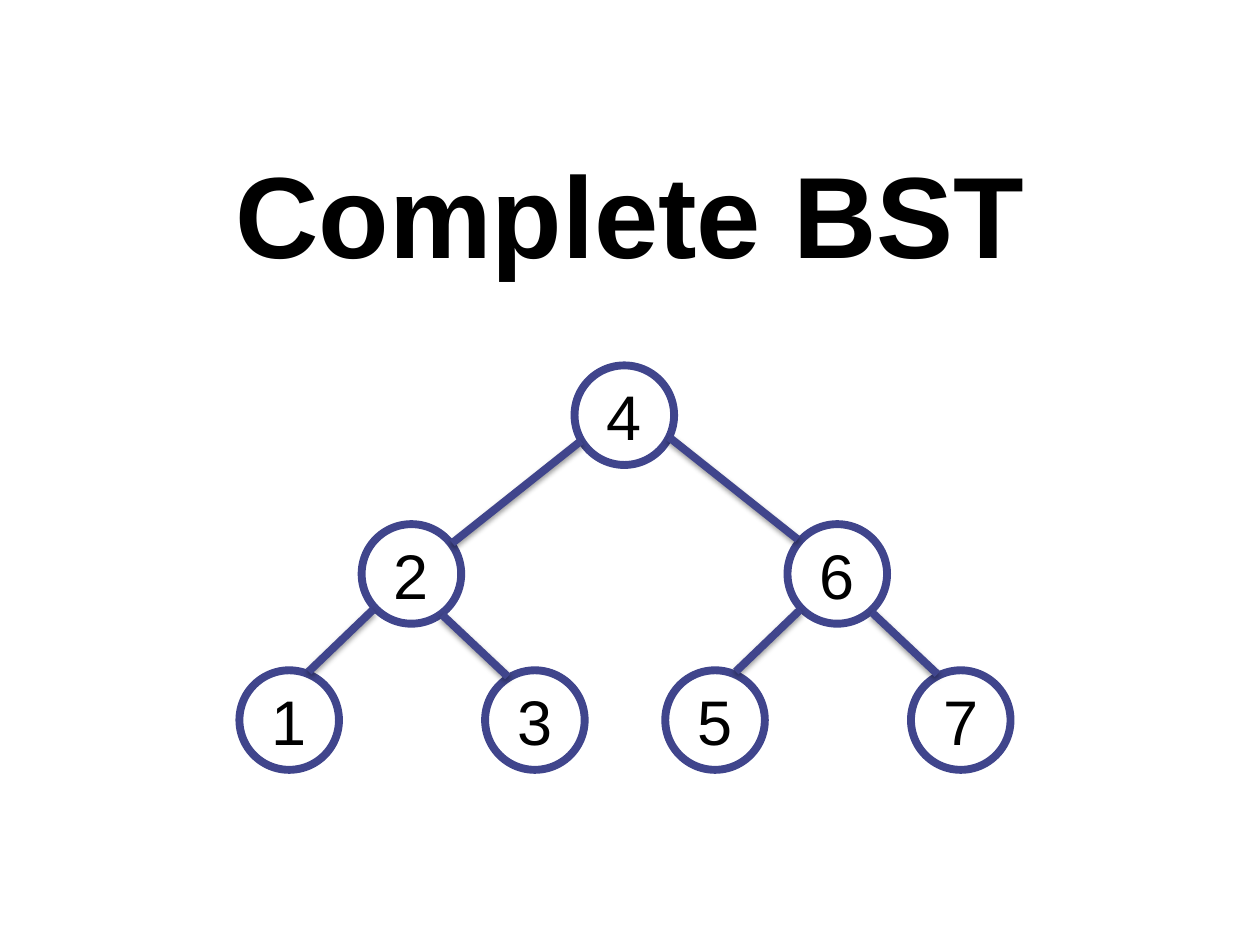
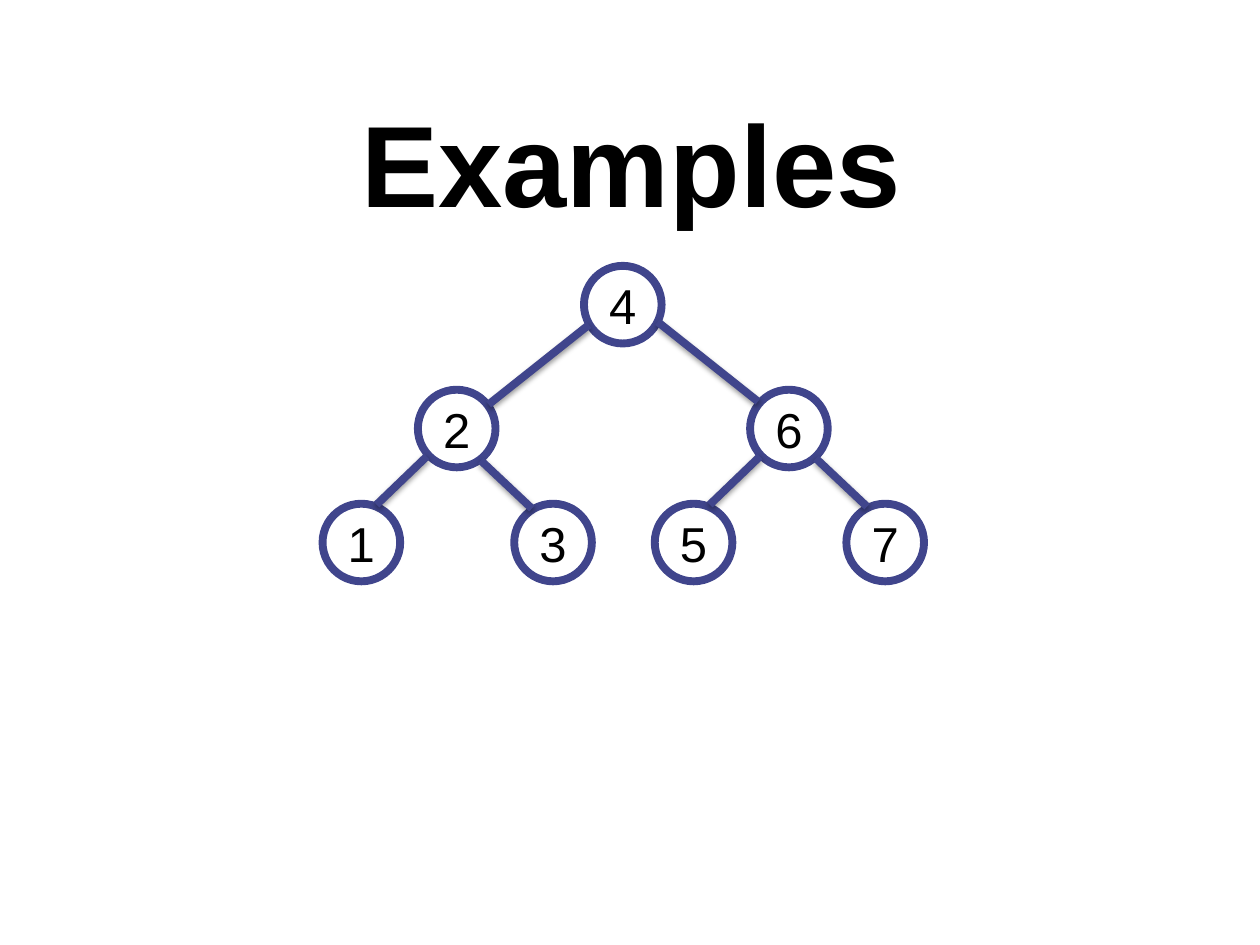
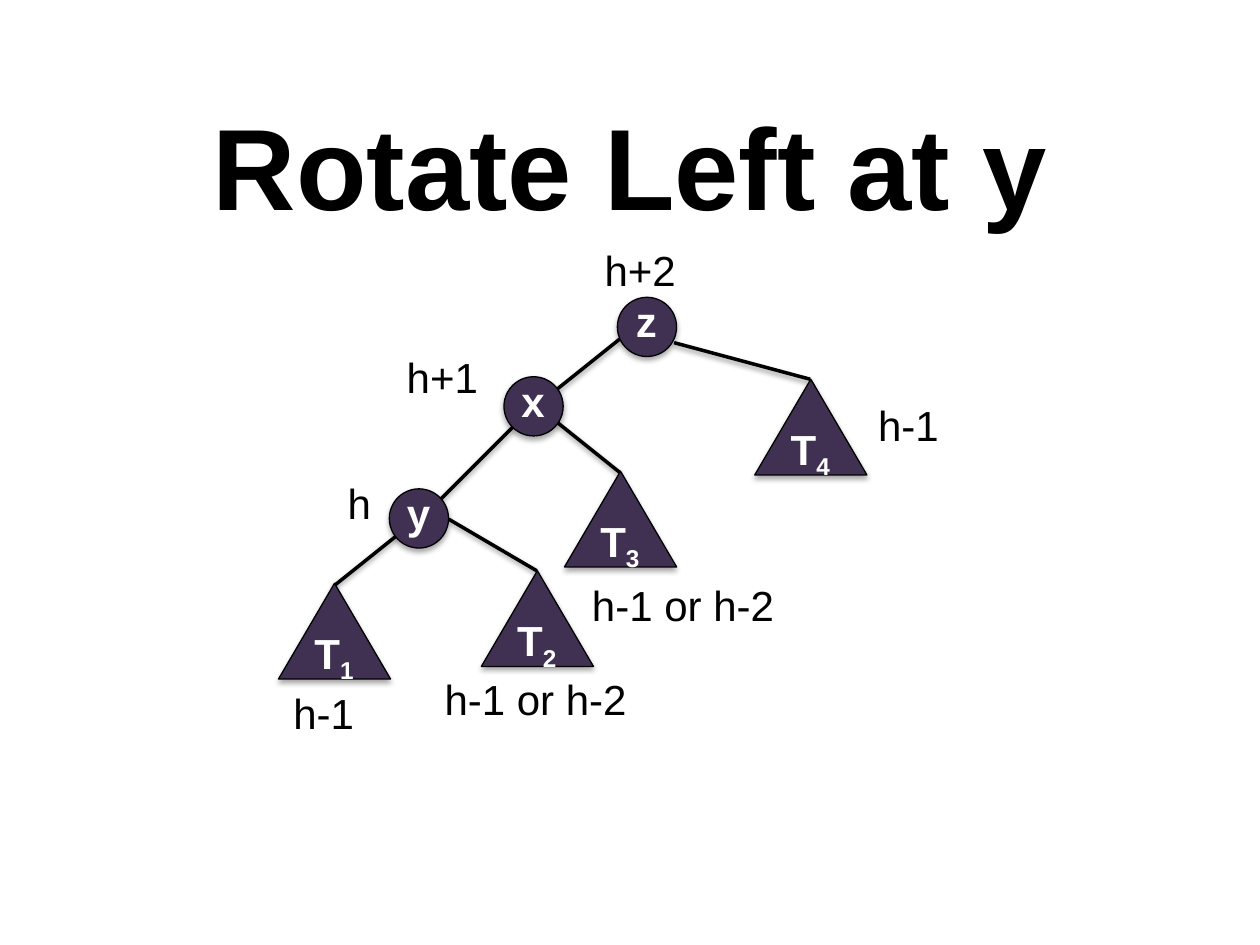
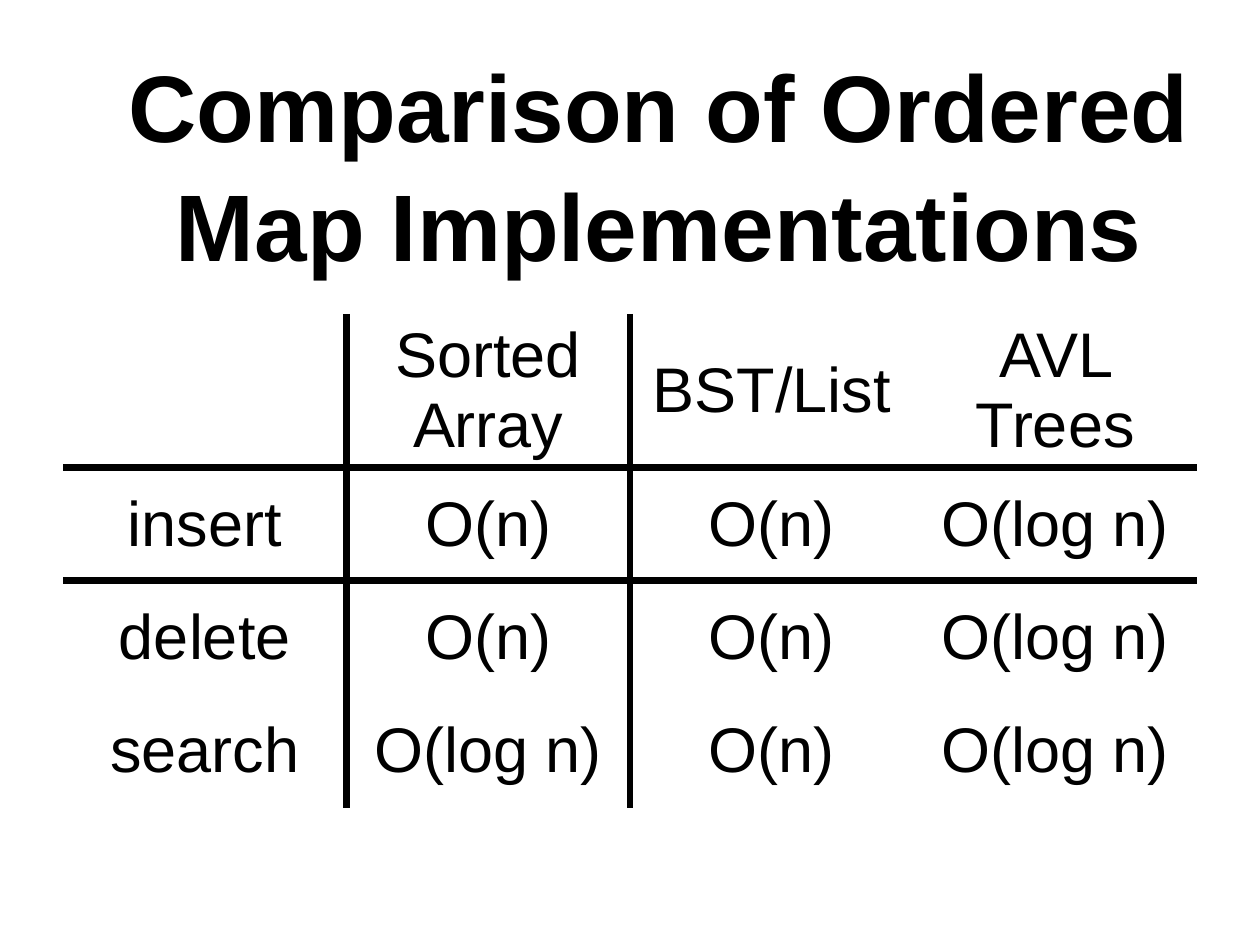
"""Builds four slides on binary search trees, AVL rotation and ordered maps."""
from pptx import Presentation
from pptx import util as u
from pptx.dml.color import RGBColor
from pptx.enum import shapes, text
from pptx.oxml import parse_xml
from pptx.oxml.ns import nsdecls

BLACK = RGBColor(0, 0, 0)
WHITE = RGBColor(255, 255, 255)
BLUE = RGBColor(0x40, 0x45, 0x8C)
PURPLE = RGBColor(0x40, 0x31, 0x52)
OVAL = shapes.MSO_SHAPE.OVAL
TRIANGLE = shapes.MSO_SHAPE.ISOSCELES_TRIANGLE
CENTER = text.PP_ALIGN.CENTER
MIDDLE = text.MSO_ANCHOR.MIDDLE

TREE_NODES = [("1", 0, 2.42), ("3", 1.95, 2.42), ("2", 0.97, 1.26), ("4", 2.66, 0),
              ("5", 3.38, 2.42), ("7", 5.33, 2.42), ("6", 4.35, 1.26)]
TREE_EDGES = [(2.71, 0.6, 1.69, 1.41), (3.41, 0.57, 4.43, 1.38),
              (1.06, 1.94, 0.55, 2.43), (1.61, 1.98, 2.13, 2.47),
              (4.45, 1.94, 3.94, 2.43), (5.02, 1.96, 5.54, 2.45)]
ROTATE_EDGES = [(3.15, 4.25, 2.65, 4.65), (3.56, 4.12, 4.26, 4.53),
                (4.42, 3.35, 4.92, 3.75), (4.07, 3.39, 3.5, 3.96),
                (4.92, 2.69, 4.42, 3.09), (5.35, 2.72, 6.43, 3.01)]
ROTATE_NODES = [("z", 4.9, 2.36), ("x", 4, 2.99), ("y", 3.09, 3.88)]
SUBTREES = [("1", 2.21, 4.63), ("2", 3.82, 4.53), ("3", 4.48, 3.74), ("4", 5.99, 3.01)]
HEIGHTS = [("h-1 or h-2", 3.43, 5.3, 1.67), ("h", 2.66, 3.74, 0.39),
           ("h-1", 2.23, 5.41, 0.69), ("h-1", 6.87, 3.12, 0.69),
           ("h+2", 4.7, 1.89, 0.8), ("h+1", 3.13, 2.74, 0.8),
           ("h-1 or h-2", 4.6, 4.55, 1.67)]
COSTS = [["", "Sorted Array", "BST/List", "AVL Trees"],
         ["insert", "O(n)", "O(n)", "O(log n)"],
         ["delete", "O(n)", "O(n)", "O(log n)"],
         ["search", "O(log n)", "O(n)", "O(log n)"]]


class Deck:
    def __init__(self):
        self.prs = Presentation()
        self.prs.slide_width, self.prs.slide_height = u.Inches(10), u.Inches(7.5)
        self.s = None

    def slide(self, title, left, top, size=66):
        self.s = self.prs.slides.add_slide(self.prs.slide_layouts[5])
        sp = self.s.shapes.title
        sp.left, sp.top = u.Inches(left), u.Inches(top)
        sp.width, sp.height = u.Inches(9), u.Inches(1.25)
        tf = sp.text_frame
        tf.auto_size = text.MSO_AUTO_SIZE.NONE
        tf.vertical_anchor = MIDDLE
        tf.margin_bottom = 0
        tf.paragraphs[0].line_spacing = 1.05
        self.run(tf, title, size, bold=True, align=CENTER)

    def run(self, tf, words, size, color=BLACK, bold=False, align=None):
        p = tf.paragraphs[0]
        p.alignment = align
        r = p.add_run()
        r.text = words
        r.font.name, r.font.size = "Arial", u.Pt(size)
        r.font.bold, r.font.color.rgb = bold, color
        return r

    def shadow(self, sp, dist, alpha):
        sp._element.spPr.append(parse_xml(
            f'<a:effectLst {nsdecls("a")}><a:outerShdw blurRad="40000" dist="{dist}" '
            f'dir="5400000" rotWithShape="0"><a:srgbClr val="000000">'
            f'<a:alpha val="{alpha}000"/></a:srgbClr></a:outerShdw></a:effectLst>'))

    def edge(self, parent, ends, color, width):
        c = parent.shapes.add_connector(
            shapes.MSO_CONNECTOR.STRAIGHT, *[u.Inches(v) for v in ends])
        c.line.color.rgb, c.line.width = color, u.Pt(width)
        self.shadow(c, 20000, 38)

    def label(self, parent, words, left, top, width, **style):
        sp = parent.shapes.add_textbox(
            u.Inches(left), u.Inches(top), u.Inches(width), u.Inches(0.5))
        tf = sp.text_frame
        tf.word_wrap = False
        tf.auto_size = text.MSO_AUTO_SIZE.SHAPE_TO_FIT_TEXT
        self.run(tf, words, 24, **style)
        return tf

    def ring(self, parent, words, left, top, side, size):
        sp = parent.shapes.add_shape(
            OVAL, u.Inches(left), u.Inches(top), u.Inches(side), u.Inches(side))
        sp.shadow.inherit = False
        sp.fill.background()
        sp.line.color.rgb, sp.line.width = BLUE, u.Pt(4.5)
        tf = sp.text_frame
        tf.word_wrap = False
        tf.vertical_anchor = MIDDLE
        self.run(tf, words, size, align=CENTER)

    def tree(self, left, top, scale, size):
        group = self.s.shapes.add_group_shape()
        for words, x, y in TREE_NODES:
            self.ring(group, words, left + x * scale, top + y * scale, 0.79 * scale, size)
        for x1, y1, x2, y2 in TREE_EDGES:
            ends = (left + x1 * scale, top + y1 * scale, left + x2 * scale, top + y2 * scale)
            self.edge(group, ends, BLUE, 4.5)

    def node(self, kind, words, left, top, size, text_at, sub=None):
        group = self.s.shapes.add_group_shape()
        sp = group.shapes.add_shape(
            kind, u.Inches(left), u.Inches(top), *[u.Inches(v) for v in size])
        sp.fill.solid()
        sp.fill.fore_color.rgb = PURPLE
        sp.line.color.rgb, sp.line.width = BLACK, u.Pt(0.75)
        self.shadow(sp, 23000, 35)
        dx, dy, width = text_at
        style = dict(color=WHITE, bold=True, align=CENTER)
        tf = self.label(group, words, left + dx, top + dy, width, **style)
        if sub:
            r = self.run(tf, sub, 24, **style)
            r._r.get_or_add_rPr().set("baseline", "-25000")

    def borders(self, cell, ruled):
        for i, side in enumerate("LRTB"):
            fill = ('<a:solidFill><a:srgbClr val="000000"/></a:solidFill>'
                    if side in ruled else "<a:noFill/>")
            cell._tc.get_or_add_tcPr().insert(i, parse_xml(
                f'<a:ln{side} {nsdecls("a")} w="{u.Pt(4.5)}">{fill}</a:ln{side}>'))

    def table(self, rows, left, top, col_width, row_height):
        n, m = len(rows), len(rows[0])
        t = self.s.shapes.add_table(
            n, m, u.Inches(left), u.Inches(top),
            u.Inches(col_width * m), u.Inches(row_height * n)).table
        t.first_row = t.horz_banding = False
        for i, row in enumerate(rows):
            for j, words in enumerate(row):
                cell = t.cell(i, j)
                cell.fill.background()
                cell.vertical_anchor = MIDDLE
                if words:
                    self.run(cell.text_frame, words, 36, align=CENTER)
                rules = {"L": j in (1, 2), "R": j in (0, 1), "T": i in (1, 2), "B": i in (0, 1)}
                self.borders(cell, [side for side, on in rules.items() if on])


def main():
    d = Deck()
    d.slide("Complete BST", 0.5, 1.01)
    d.tree(1.9, 2.9, 1, 36)

    d.slide("Examples", 0.51, 0.6)
    d.tree(2.56, 2.11, 0.78, 28)

    d.slide("Rotate Left at y", 0.5, 0.63)
    for ends in ROTATE_EDGES:
        d.edge(d.s, ends, BLACK, 2)
    for words, x, y in ROTATE_NODES:
        d.node(OVAL, words, x, y, (0.47, 0.47), (0.04, -0.06, 0.38))
    for sub, x, y in SUBTREES:
        d.node(TRIANGLE, "T", x, y, (0.89, 0.76), (0.18, 0.3, 0.52), sub)
    for words, x, y, width in HEIGHTS:
        d.label(d.s, words, x, y, width)

    d.slide("Comparison of Ordered Map Implementations", 0.73, 0.63, 54)
    d.table(COSTS, 0.5, 2.49, 2.25, 0.9)
    d.prs.save("out.pptx")


if __name__ == "__main__":
    main()
